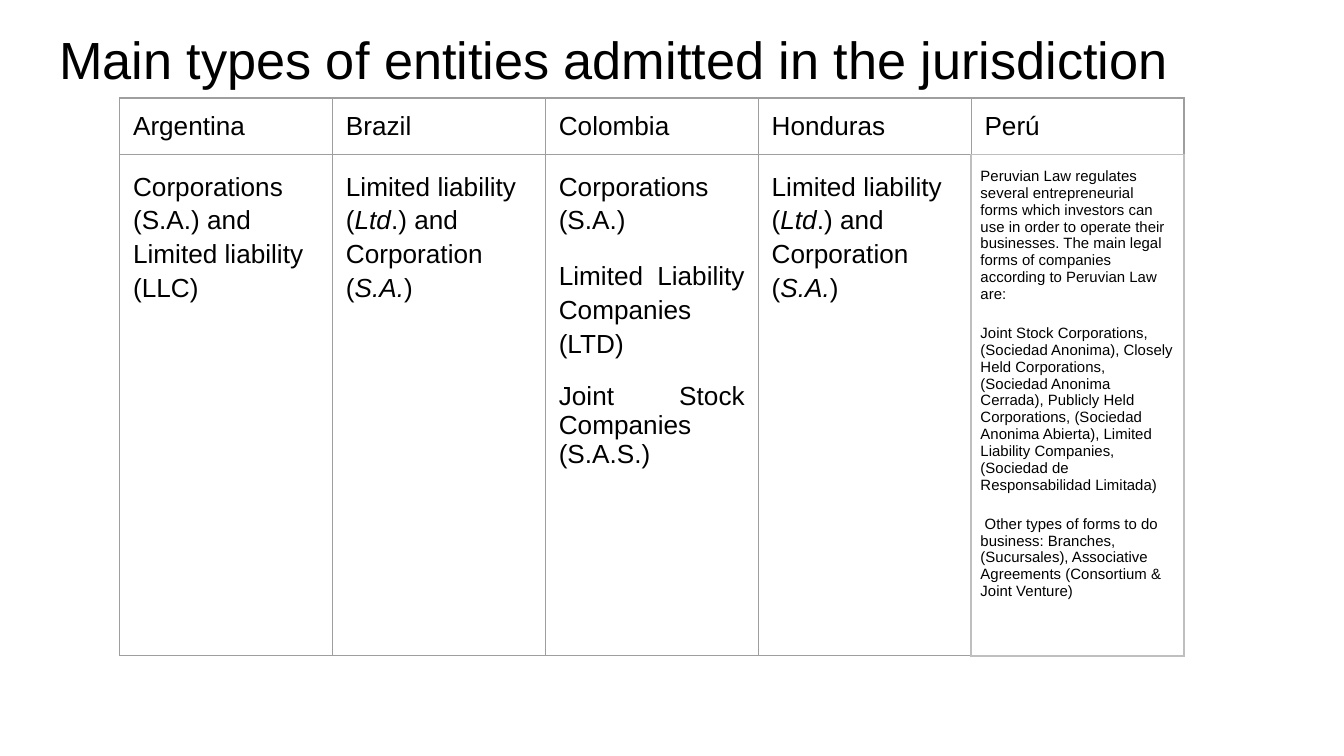
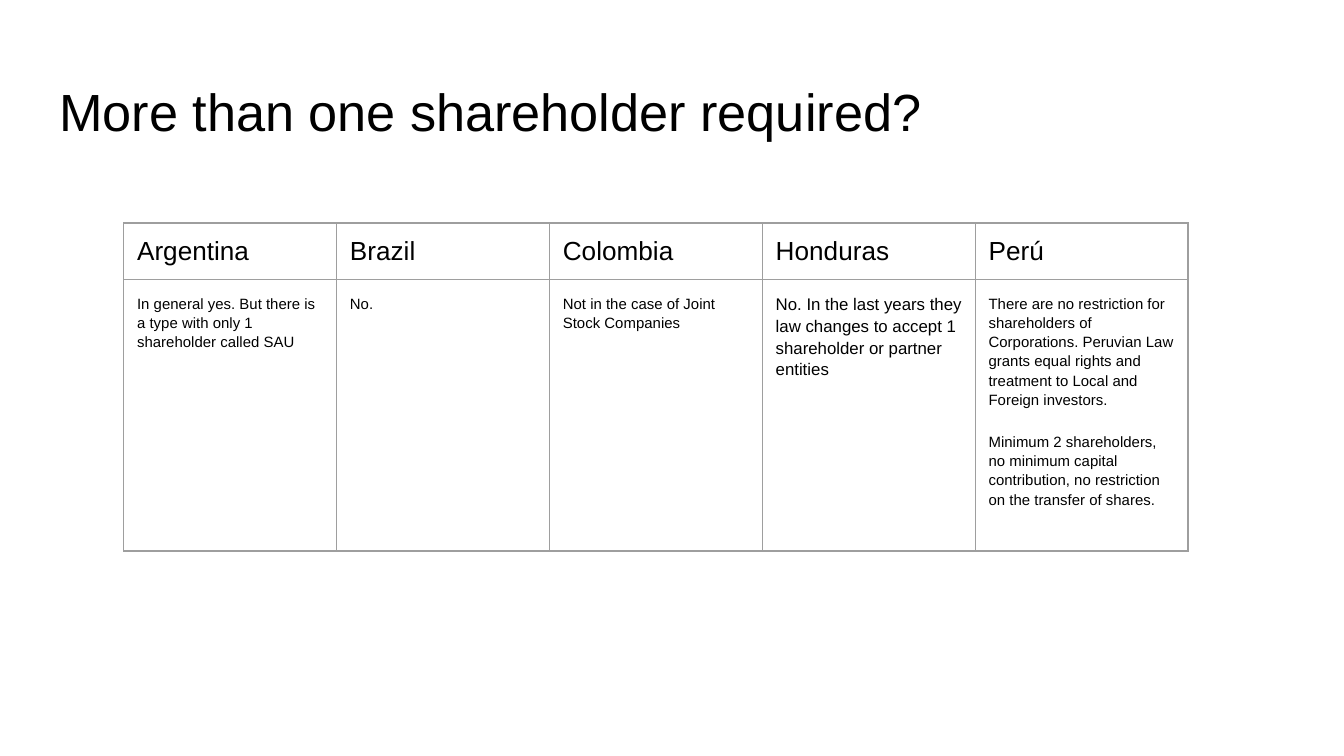
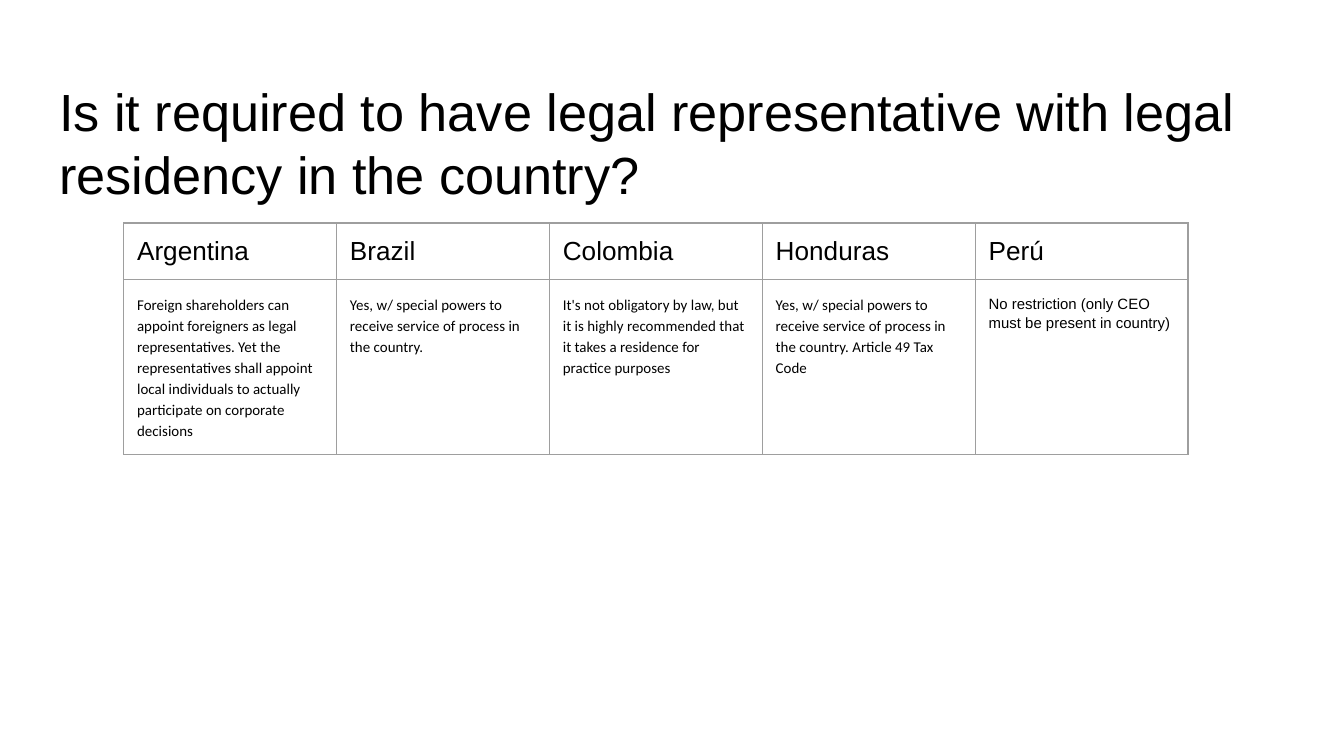
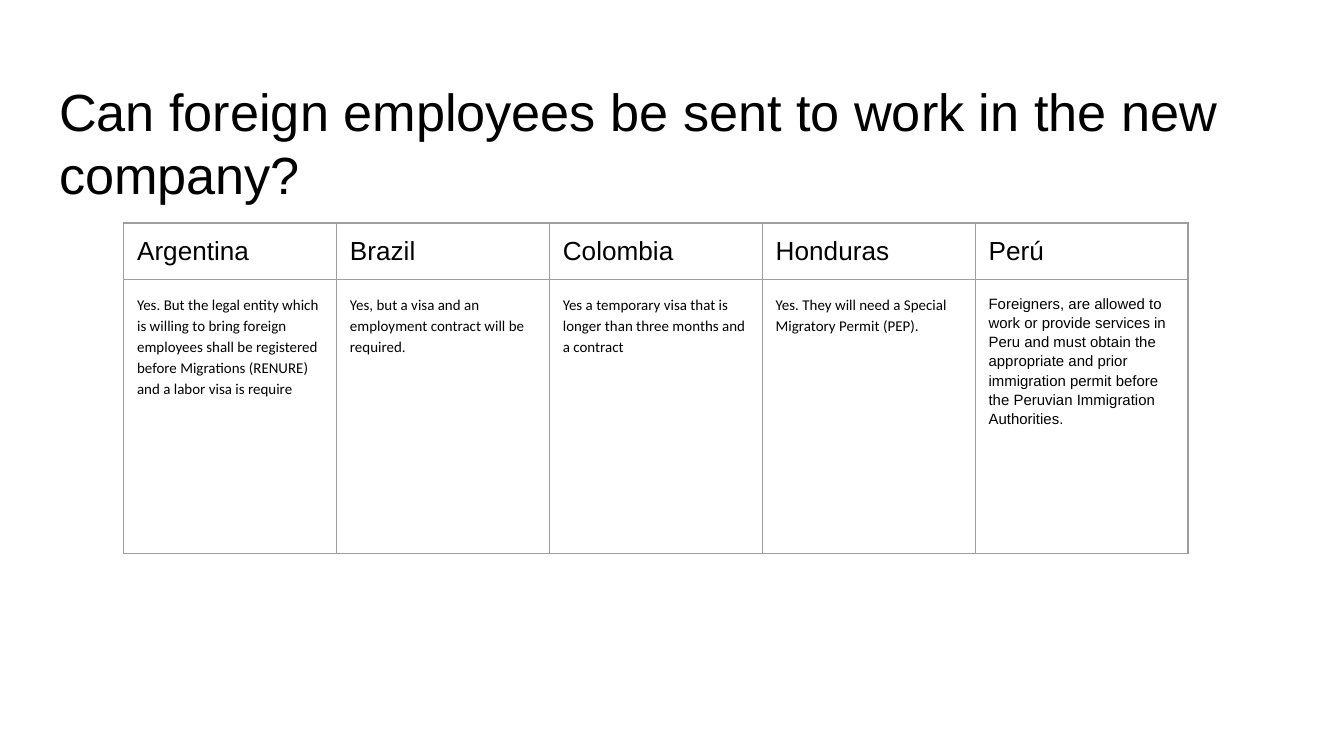
import dataclasses

import lxml.etree
import pptx
import pptx.dml.color
import pptx.enum.text
import pptx.oxml.ns
import pptx.util

Inches = pptx.util.Inches
Pt = pptx.util.Pt
ALIGN = pptx.enum.text.PP_ALIGN
ANCHOR = pptx.enum.text.MSO_ANCHOR


@dataclasses.dataclass(frozen=True)
class Theme:
    text: str = "000000"
    background: str = "FFFFFF"
    grid: str = "9E9E9E"
    light_grid: str = "BFBFBF"
    grid_width: float = 0.75
    light_grid_width: float = 1
    font: str = "Arial"
    alt_font: str = "Calibri"
    title_size: int = 28
    header_size: int = 14
    large_size: int = 14
    medium_size: int = 9
    small_size: int = 8
    loose: float = 1.15
    tight: float = 1.0
    paragraph_gap: int = 12
    inset: float = 0.1
    narrow_inset: float = 0.07


THEME = Theme()
COUNTRIES = ("Argentina", "Brazil", "Colombia", "Honduras", "Perú")
SLIDE_WIDTH = 10
TABLE_WIDTH = 7.92
HEADER_HEIGHT = 0.42
TITLE_LEFT, TITLE_WIDTH, TITLE_HEIGHT = 0.34, 9.32, 0.63


@dataclasses.dataclass(frozen=True)
class Answer:
    """One country's reply; asterisks enclose italic words."""
    paragraphs: tuple
    size: int = THEME.small_size
    font: str = THEME.font
    align: ALIGN = ALIGN.LEFT
    spacing: float = THEME.loose
    last_spacing: float = THEME.loose
    inset: float = THEME.inset
    light: bool = False


@dataclasses.dataclass(frozen=True)
class Question:
    title: str
    answers: tuple
    answer_height: float
    title_top: float = 0.49
    table_left: float = 0.92
    table_top: float = 1.66


def calibri(text):
    return Answer((text,), font=THEME.alt_font)


LIMITED_OR_CORPORATION = Answer(
    ("Limited liability (*Ltd*.) and Corporation (*S.A.*)",), THEME.large_size)

QUESTIONS = (
    Question(
        "Main types of entities admitted in the jurisdiction",
        (
            Answer(("Corporations (S.A.) and Limited liability (LLC)",), THEME.large_size),
            LIMITED_OR_CORPORATION,
            Answer(("Corporations (S.A.)",
                    "Limited Liability Companies (LTD)",
                    "Joint Stock Companies (S.A.S.)"),
                   THEME.large_size, align=ALIGN.JUSTIFY, last_spacing=THEME.tight),
            LIMITED_OR_CORPORATION,
            Answer(("Peruvian Law regulates several entrepreneurial forms which investors "
                    "can use in order to operate their businesses. The main legal forms of "
                    "companies according to Peruvian Law are:",
                    "Joint Stock Corporations, (Sociedad Anonima), Closely Held Corporations, "
                    "(Sociedad Anonima Cerrada), Publicly Held Corporations, (Sociedad Anonima "
                    "Abierta), Limited Liability Companies, (Sociedad de Responsabilidad "
                    "Limitada)",
                    " Other types of forms to do business: Branches, (Sucursales), Associative "
                    "Agreements (Consortium & Joint Venture)"),
                   spacing=THEME.tight, last_spacing=THEME.tight,
                   inset=THEME.narrow_inset, light=True),
        ),
        answer_height=3.73, title_top=0.1, table_left=0.89, table_top=0.73),
    Question(
        "More than one shareholder required?",
        (
            Answer(("In general yes. But there is a type with only 1 shareholder called SAU",)),
            Answer(("No.",)),
            Answer(("Not in the case of Joint Stock Companies",)),
            Answer(("No. In the last years they law changes to accept 1 shareholder or "
                    "partner entities",), THEME.medium_size),
            Answer(("There are no restriction for shareholders of Corporations. Peruvian Law "
                    "grants equal rights and treatment to Local and Foreign investors.",
                    "Minimum 2 shareholders, no minimum capital contribution, no restriction "
                    "on the transfer of shares.")),
        ),
        answer_height=2.02),
    Question(
        "Is it required to have legal representative with legal residency in the country?",
        (
            calibri("Foreign shareholders can appoint foreigners as legal representatives. Yet "
                    "the representatives shall appoint local individuals to actually "
                    "participate on corporate decisions"),
            calibri("Yes, w/ special powers to receive service of process in the country."),
            calibri("It's not obligatory by law, but it is highly recommended that it takes a "
                    "residence for practice purposes"),
            calibri("Yes, w/ special powers to receive service of process in the country. "
                    "Article 49 Tax Code"),
            Answer(("No restriction (only CEO must be present in country)",)),
        ),
        answer_height=1.29),
    Question(
        "Can foreign employees be sent to work in the new company?",
        (
            calibri("Yes. But the legal entity which is willing to bring foreign employees "
                    "shall be registered before Migrations (RENURE) and a labor visa is require"),
            calibri("Yes, but a visa and an employment contract will be required."),
            calibri("Yes a temporary visa that is longer than three months and a contract"),
            calibri("Yes. They will need a Special Migratory Permit (PEP)."),
            Answer(("Foreigners, are allowed to work or provide services in Peru and must "
                    "obtain the appropriate and prior immigration permit before the Peruvian "
                    "Immigration Authorities.",)),
        ),
        answer_height=2.04),
)


def rgb(code):
    return pptx.dml.color.RGBColor.from_string(code)


def add_run(paragraph, text, size, font=THEME.font, italic=False):
    run = paragraph.add_run()
    run.text = text
    run.font.size = Pt(size)
    run.font.name = font
    run.font.bold = False
    run.font.italic = italic
    run.font.color.rgb = rgb(THEME.text)


def set_insets(holder, side):
    """Give a text frame or cell its margins; top and bottom never vary."""
    holder.margin_left = holder.margin_right = Inches(side)
    holder.margin_top = holder.margin_bottom = Inches(THEME.inset)


def set_borders(cell, light_sides=""):
    properties = cell._tc.get_or_add_tcPr()
    for side in "LRTB":
        light = side in light_sides
        color = THEME.light_grid if light else THEME.grid
        width = THEME.light_grid_width if light else THEME.grid_width
        line = lxml.etree.SubElement(
            properties, pptx.oxml.ns.qn(f"a:ln{side}"), w=str(int(Pt(width))))
        fill = lxml.etree.SubElement(line, pptx.oxml.ns.qn("a:solidFill"))
        lxml.etree.SubElement(fill, pptx.oxml.ns.qn("a:srgbClr"), val=color)


def style_cell(cell, inset=THEME.inset, light_sides=""):
    set_insets(cell, inset)
    cell.vertical_anchor = ANCHOR.TOP
    set_borders(cell, light_sides)
    cell.fill.background()


def fill_header(cell, country, above_light):
    style_cell(cell, light_sides="B" if above_light else "")
    add_run(cell.text_frame.paragraphs[0], country, THEME.header_size)


def fill_answer(cell, answer, before_light):
    style_cell(cell, answer.inset, "LRTB" if answer.light else "R" if before_light else "")
    frame = cell.text_frame
    for index, text in enumerate(answer.paragraphs):
        paragraph = frame.add_paragraph() if index else frame.paragraphs[0]
        last = index == len(answer.paragraphs) - 1
        paragraph.alignment = answer.align
        paragraph.line_spacing = answer.last_spacing if last else answer.spacing
        paragraph.space_before = Pt(THEME.paragraph_gap)
        for part, words in enumerate(text.split("*")):
            add_run(paragraph, words, answer.size, answer.font, italic=part % 2 == 1)


def place_title(slide, text, left, top, width, height):
    title = slide.shapes.title
    title.left, title.top = Inches(left), Inches(top)
    title.width, title.height = Inches(width), Inches(height)
    frame = title.text_frame
    frame.word_wrap = True
    frame.auto_size = pptx.enum.text.MSO_AUTO_SIZE.NONE
    frame.vertical_anchor = ANCHOR.TOP
    set_insets(frame, THEME.inset)
    paragraph = frame.paragraphs[0]
    paragraph.alignment = ALIGN.LEFT
    add_run(paragraph, text, THEME.title_size)


def place_country_table(slide, answers, left, top, width, answer_height):
    table = slide.shapes.add_table(
        2, len(COUNTRIES), Inches(left), Inches(top),
        Inches(width), Inches(HEADER_HEIGHT + answer_height)).table
    table.first_row = table.horz_banding = False
    table.rows[0].height = Inches(HEADER_HEIGHT)
    table.rows[1].height = Inches(answer_height)
    next_lights = [answer.light for answer in answers[1:]] + [False]
    for column, (country, answer) in enumerate(zip(COUNTRIES, answers)):
        table.columns[column].width = Inches(width / len(COUNTRIES))
        fill_header(table.cell(0, column), country, answer.light)
        fill_answer(table.cell(1, column), answer, next_lights[column])


def add_question_slide(deck, question):
    slide = deck.slides.add_slide(deck.slide_layouts.get_by_name("Title Only"))
    slide.background.fill.solid()
    slide.background.fill.fore_color.rgb = rgb(THEME.background)
    place_title(slide, question.title, TITLE_LEFT, question.title_top,
                TITLE_WIDTH, TITLE_HEIGHT)
    place_country_table(slide, question.answers, question.table_left,
                        question.table_top, TABLE_WIDTH, question.answer_height)


def main():
    deck = pptx.Presentation()
    deck.slide_width = Inches(SLIDE_WIDTH)
    deck.slide_height = Inches(SLIDE_WIDTH * 9 / 16)
    for question in QUESTIONS:
        add_question_slide(deck, question)
    deck.save("out.pptx")


if __name__ == "__main__":
    main()
